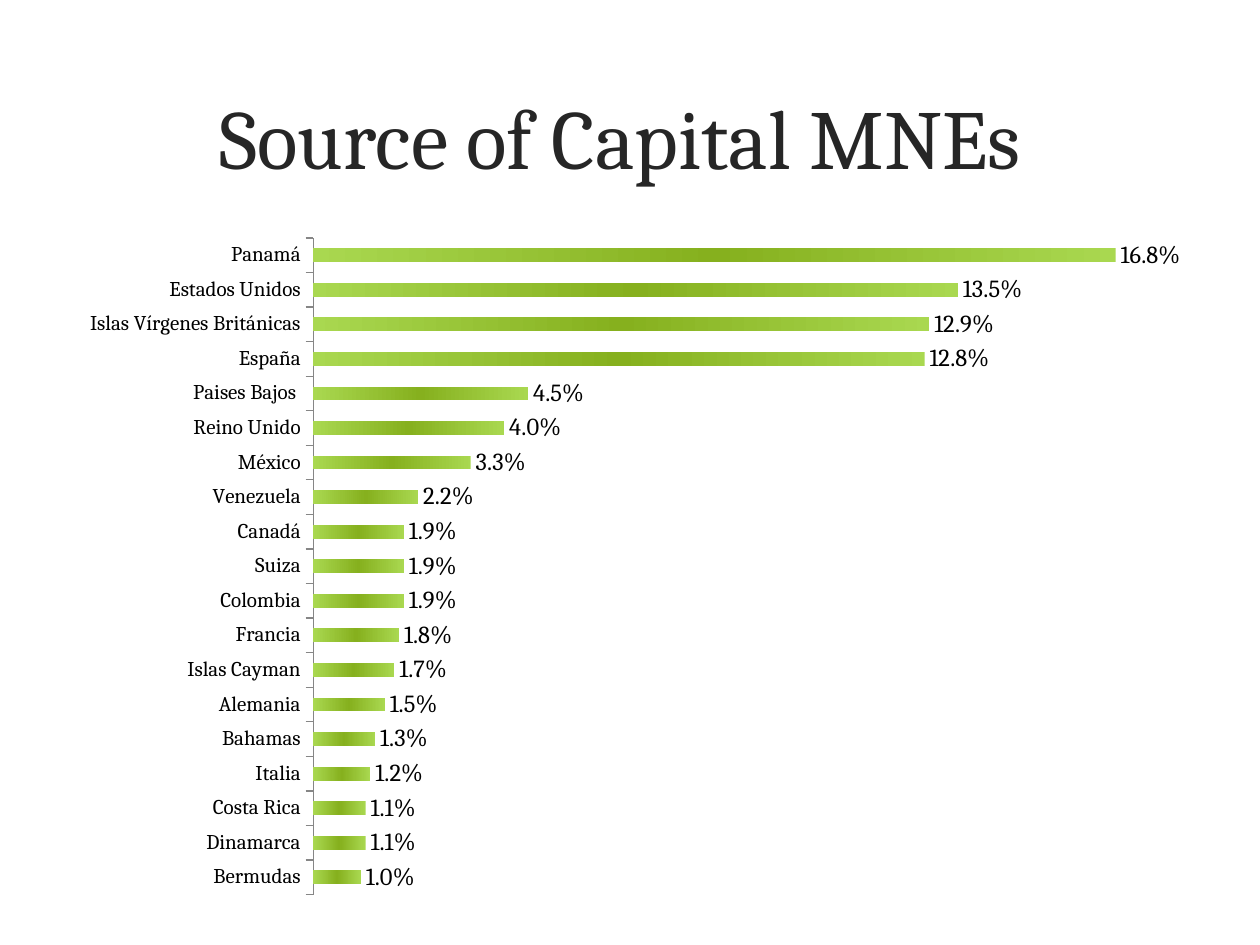
import pptx
import pptx.chart.data
import pptx.dml.color
import pptx.enum.chart
import pptx.enum.text
import pptx.oxml
import pptx.oxml.ns
import pptx.util

RGBColor = pptx.dml.color.RGBColor
Inches = pptx.util.Inches
Pt = pptx.util.Pt

TITLE = "Source of Capital MNEs "
SHARES = [
    ("Panamá", 0.168),
    ("Estados Unidos", 0.135),
    ("Islas Vírgenes Británicas", 0.129),
    ("España", 0.128),
    ("Paises Bajos ", 0.045),
    ("Reino Unido", 0.04),
    ("México", 0.033),
    ("Venezuela", 0.022),
    ("Canadá", 0.019),
    ("Suiza", 0.019),
    ("Colombia", 0.019),
    ("Francia", 0.018),
    ("Islas Cayman", 0.017),
    ("Alemania", 0.015),
    ("Bahamas", 0.013),
    ("Italia", 0.012),
    ("Costa Rica", 0.011),
    ("Dinamarca", 0.011),
    ("Bermudas", 0.01),
]
FONT = "Cambria"
INK = RGBColor(0x26, 0x26, 0x26)
BLACK = RGBColor(0x00, 0x00, 0x00)
AXIS_GREY = RGBColor(0x86, 0x86, 0x86)
LIGHT_GREEN = RGBColor(0xA9, 0xD8, 0x50)
DARK_GREEN = RGBColor(0x86, 0xB0, 0x1E)
BAR_STOPS = [(0, LIGHT_GREEN), (50, DARK_GREEN), (100, LIGHT_GREEN)]
PLOT_SHARES = {"x": 0.22, "y": 0.02, "w": 0.76, "h": 0.96}


def add_title(page):
    title = page.shapes.title
    title.left, title.top = Inches(0.6), Inches(0.29)
    title.width, title.height = Inches(8.79), Inches(1.58)
    title.text_frame.vertical_anchor = pptx.enum.text.MSO_ANCHOR.MIDDLE
    title.text_frame.text = TITLE
    para = title.text_frame.paragraphs[0]
    para.alignment = pptx.enum.text.PP_ALIGN.CENTER
    para.font.name = FONT
    para.font.size = Pt(48)
    para.font.color.rgb = INK


def fill_bars(series):
    stops = "".join(
        f'<a:gs pos="{share * 1000}"><a:srgbClr val="{color}"/></a:gs>'
        for share, color in BAR_STOPS
    )
    gradient = pptx.oxml.parse_xml(
        f'<a:gradFill {pptx.oxml.ns.nsdecls("a")} rotWithShape="1">'
        f'<a:gsLst>{stops}</a:gsLst><a:lin ang="0" scaled="0"/></a:gradFill>'
    )
    series.format.line.fill.background()
    series._element.get_or_add_spPr().insert(0, gradient)


def place_plot(chart):
    sizes = "".join(f'<c:{side} val="{share}"/>' for side, share in PLOT_SHARES.items())
    layout = pptx.oxml.parse_xml(
        f'<c:layout {pptx.oxml.ns.nsdecls("c")}><c:manualLayout>'
        '<c:layoutTarget val="inner"/><c:xMode val="edge"/><c:yMode val="edge"/>'
        f'{sizes}</c:manualLayout></c:layout>'
    )
    area = chart._chartSpace.chart.plotArea
    for old in area.findall(pptx.oxml.ns.qn("c:layout")):
        area.remove(old)
    area.insert(0, layout)


def add_bars(page):
    data = pptx.chart.data.CategoryChartData(number_format="0.0%")
    ascending = SHARES[::-1]
    data.categories = [country for country, share in ascending]
    data.add_series("Series 1", [share for country, share in ascending])
    chart = page.shapes.add_chart(
        pptx.enum.chart.XL_CHART_TYPE.BAR_CLUSTERED,
        Inches(0.51), Inches(1.78), Inches(8.98), Inches(5.43), data,
    ).chart
    chart.has_title = False
    chart.has_legend = False
    chart.font.name = FONT
    chart.font.size = Pt(18)
    chart.font.color.rgb = BLACK

    countries = chart.category_axis
    countries.major_tick_mark = pptx.enum.chart.XL_TICK_MARK.OUTSIDE
    countries.tick_labels.font.size = Pt(12)
    countries.format.line.color.rgb = AXIS_GREY
    countries.format.line.width = Pt(0.75)

    values = chart.value_axis
    values.visible = False
    values.has_major_gridlines = False
    values.minimum_scale = 0
    values.maximum_scale = 0.18

    plot = chart.plots[0]
    plot.vary_by_categories = False
    plot.gap_width = 150
    plot.has_data_labels = True
    labels = plot.data_labels
    labels.show_value = True
    labels.number_format = "0.0%"
    labels.number_format_is_linked = False
    labels.position = pptx.enum.chart.XL_LABEL_POSITION.OUTSIDE_END
    labels.font.size = Pt(14)
    fill_bars(plot.series[0])
    place_plot(chart)


def main():
    deck = pptx.Presentation()
    deck.slide_width, deck.slide_height = Inches(10), Inches(7.5)
    page = deck.slides.add_slide(deck.slide_layouts.get_by_name("Title Only"))
    add_title(page)
    add_bars(page)
    deck.save("out.pptx")


if __name__ == "__main__":
    main()
